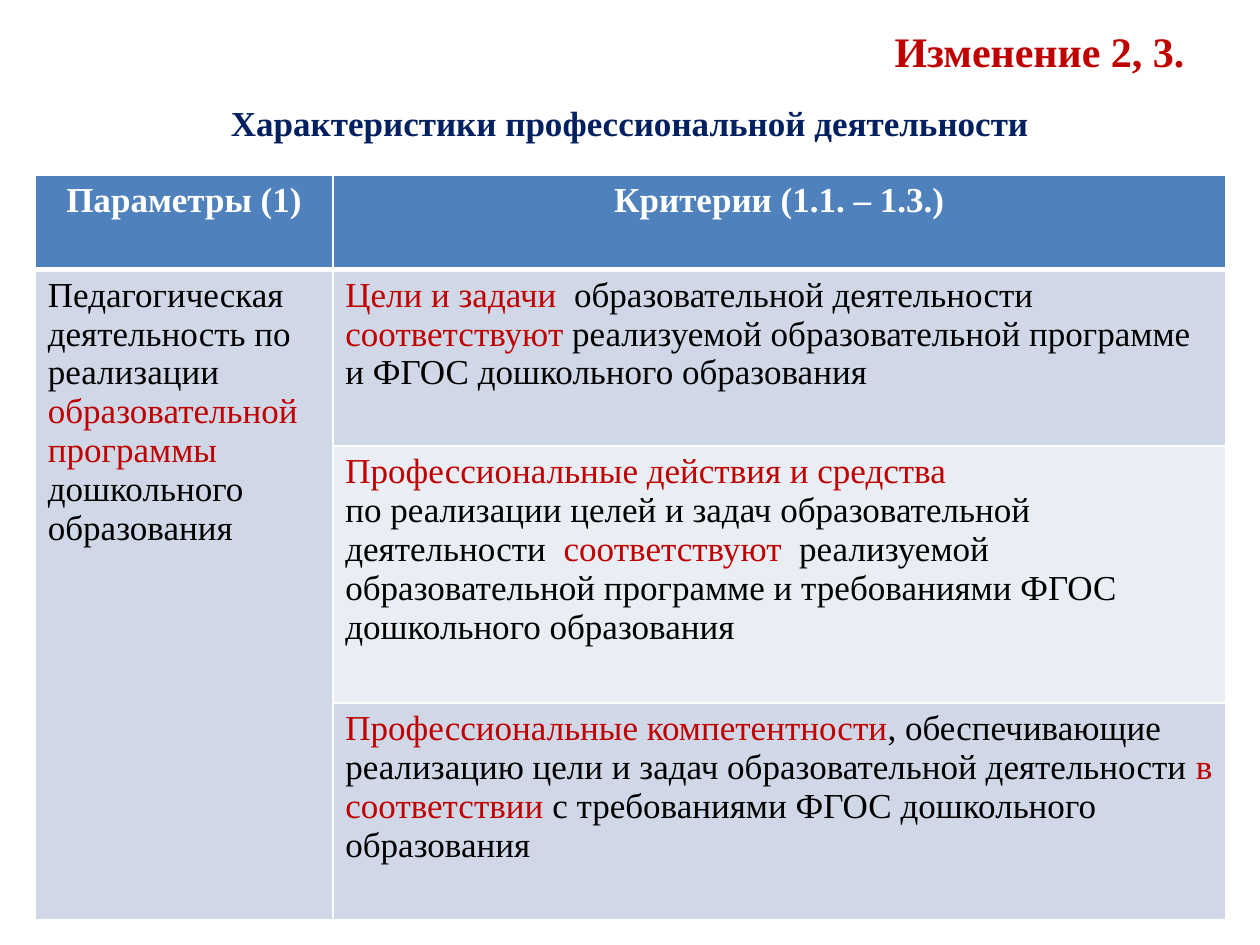
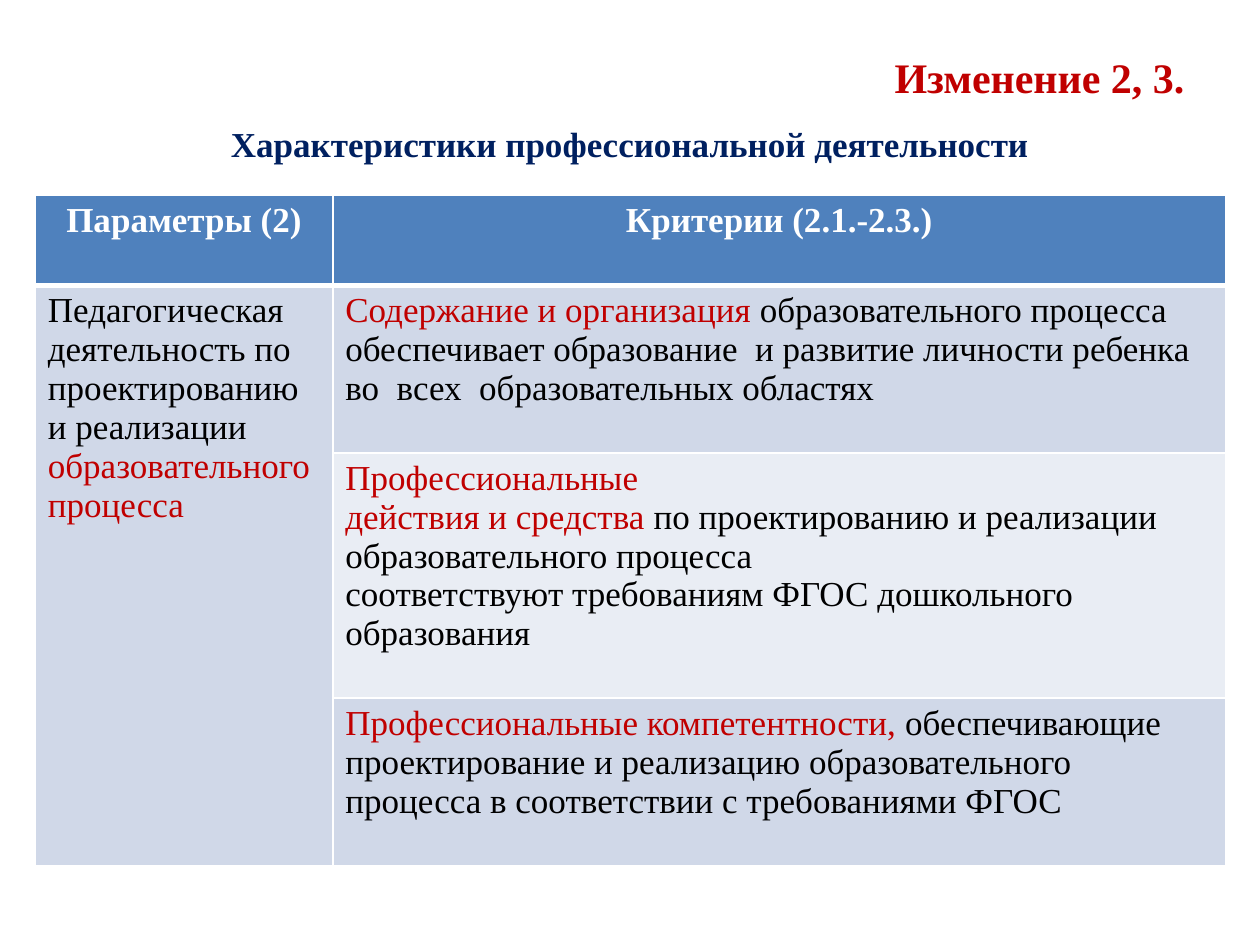
import pptx
import pptx.util
import pptx.dml.color
import pptx.enum.text
import lxml.etree

Pt = pptx.util.Pt
RGBColor = pptx.dml.color.RGBColor
ALIGN = pptx.enum.text.PP_ALIGN
ANCHOR = pptx.enum.text.MSO_ANCHOR

FONT = "Times New Roman"
RED = RGBColor(0xC0, 0x00, 0x00)
NAVY = RGBColor(0x00, 0x20, 0x60)
BLACK = RGBColor(0x00, 0x00, 0x00)
WHITE = RGBColor(0xFF, 0xFF, 0xFF)
HEADER_BLUE = RGBColor(0x4F, 0x81, 0xBD)
BAND_DARK = RGBColor(0xD0, 0xD8, 0xE8)
BAND_LIGHT = RGBColor(0xE9, 0xED, 0xF4)

MARGIN = 36
CONTENT_WIDTH = 648
BODY_BOTTOM = 482.4
TABLE_LEFT = 20.16
COLUMN_WIDTHS = (170, 510.4)

# Each cell is a list of paragraphs; each paragraph is a list of (text, colour)
SLIDES = [
    {
        "title": (9.4, 39.6), "subtitle_top": 54.7, "table_top": 100.1,
        "rows": (54, 100.8, 146.9, 123.8),
        "headers": ("Параметры (1)", "Критерии (1.1. – 1.3.)"),
        "parameter": [[("Педагогическая деятельность по реализации ", BLACK),
                       ("образовательной  программы ", RED),
                       ("дошкольного образования", BLACK)]],
        "criteria": [
            [[("Цели и задачи", RED),
              ("  образовательной деятельности ", BLACK),
              ("соответствуют", RED),
              (" реализуемой образовательной программе и ФГОС "
               "дошкольного образования", BLACK)]],
            [[("Профессиональные действия и средства", RED)],
             [("по реализации целей и задач образовательной деятельности  ", BLACK),
              ("соответствуют", RED),
              ("  реализуемой образовательной программе и требованиями ФГОС "
               "дошкольного образования", BLACK)]],
            [[("Профессиональные компетентности", RED),
              (", обеспечивающие реализацию цели и задач "
               "образовательной деятельности ", BLACK),
              ("в соответствии", RED),
              (" с требованиями ФГОС дошкольного образования", BLACK)]],
        ],
    },
    {
        "title": (21.6, 43.9), "subtitle_top": 66.2, "table_top": 111.4,
        "rows": (51.6, 95.8, 140.2, 95.8),
        "headers": ("Параметры (2)", "Критерии (2.1.-2.3.)"),
        "parameter": [[("Педагогическая деятельность по проектированию "
                        "и реализации ", BLACK),
                       ("образовательного процесса", RED)]],
        "criteria": [
            [[("Содержание и организация ", RED),
              ("образовательного процесса обеспечивает образование  и развитие "
               "личности ребенка  во  всех  образовательных областях", BLACK)]],
            [[("Профессиональные", RED)],
             [("действия и средства ", RED),
              ("по проектированию и реализации образовательного процесса", BLACK)],
             [("соответствуют требованиям ФГОС дошкольного образования", BLACK)]],
            [[("Профессиональные компетентности, ", RED),
              ("обеспечивающие проектирование и реализацию образовательного "
               "процесса в соответствии с требованиями ФГОС", BLACK)]],
        ],
    },
]


def write_text(frame, paragraphs, align=ALIGN.LEFT, size=20, bold=False):
    frame.word_wrap = True
    for index, spans in enumerate(paragraphs):
        para = frame.paragraphs[0] if index == 0 else frame.add_paragraph()
        para.alignment = align
        for text, colour in spans:
            span = para.add_run()
            span.text = text
            span.font.name = FONT
            span.font.size = Pt(size)
            span.font.bold = bold
            span.font.color.rgb = colour


def style_cell(cell, fill, top, bottom):
    cell.fill.solid()
    cell.fill.fore_color.rgb = fill
    properties = cell._tc.get_or_add_tcPr()
    borders = (("lnL", 1), ("lnR", 1), ("lnT", top), ("lnB", bottom))
    for position, (side, width) in enumerate(borders):
        line = lxml.etree.Element(pptx.oxml.ns.qn("a:" + side), w=str(Pt(width)))
        solid = lxml.etree.SubElement(line, pptx.oxml.ns.qn("a:solidFill"))
        lxml.etree.SubElement(solid, pptx.oxml.ns.qn("a:srgbClr"), val=str(WHITE))
        properties.insert(position, line)


deck = pptx.Presentation()
deck.slide_width = Pt(720)
deck.slide_height = Pt(540)

for content in SLIDES:
    page = deck.slides.add_slide(deck.slide_layouts[6])

    # Title
    title_top, title_height = content["title"]
    box = page.shapes.add_textbox(Pt(MARGIN), Pt(title_top),
                                  Pt(CONTENT_WIDTH), Pt(title_height))
    box.text_frame.vertical_anchor = ANCHOR.MIDDLE
    write_text(box.text_frame, [[("Изменение 2, 3.", RED)]],
               ALIGN.RIGHT, size=24, bold=True)

    # Subtitle
    top = content["subtitle_top"]
    box = page.shapes.add_textbox(Pt(MARGIN), Pt(top),
                                  Pt(CONTENT_WIDTH), Pt(BODY_BOTTOM - top))
    write_text(box.text_frame,
               [[("Характеристики профессиональной деятельности", NAVY)]],
               ALIGN.CENTER, bold=True)

    # Table grid
    heights = content["rows"]
    table = page.shapes.add_table(
        len(heights), len(COLUMN_WIDTHS), Pt(TABLE_LEFT), Pt(content["table_top"]),
        Pt(sum(COLUMN_WIDTHS)), Pt(sum(heights))).table
    for column, width in zip(table.columns, COLUMN_WIDTHS):
        column.width = Pt(width)
    for index, height in enumerate(heights):
        table.rows[index].height = Pt(height)
        fill = HEADER_BLUE if index == 0 else (BAND_LIGHT, BAND_DARK)[index % 2]
        for cell in table.rows[index].cells:
            style_cell(cell, fill, top=3 if index == 1 else 1,
                       bottom=3 if index == 0 else 1)
    table.cell(1, 0).merge(table.cell(len(heights) - 1, 0))

    # Table text
    for index, header in enumerate(content["headers"]):
        write_text(table.cell(0, index).text_frame, [[(header, WHITE)]],
                   ALIGN.CENTER, bold=True)
    write_text(table.cell(1, 0).text_frame, content["parameter"])
    for index, criterion in enumerate(content["criteria"], start=1):
        write_text(table.cell(index, 1).text_frame, criterion)

deck.save("out.pptx")
